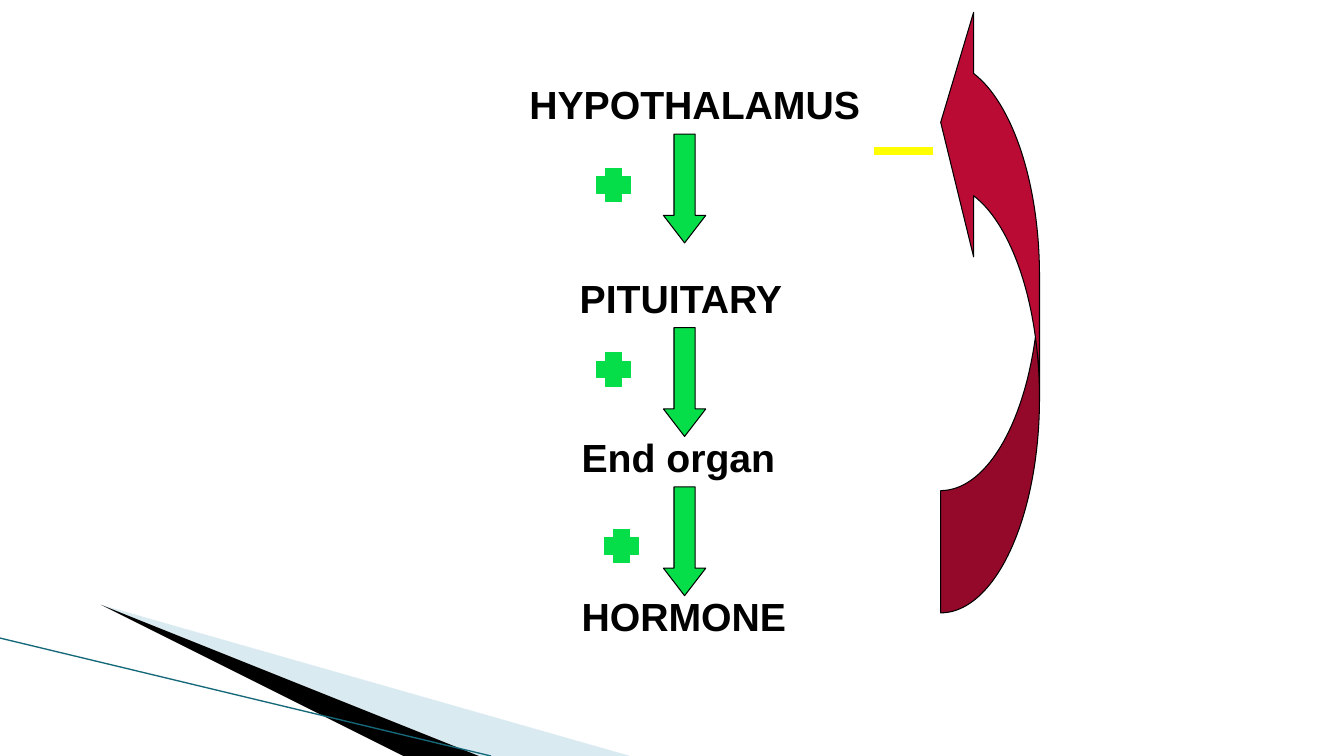
from pptx import Presentation as Deck
from pptx.dml.color import RGBColor as Rgb
from pptx.enum.shapes import MSO_CONNECTOR as Link, MSO_SHAPE as Kind
from pptx.enum.text import MSO_AUTO_SIZE as Fit
from pptx.oxml.ns import qn
from pptx.util import Inches, Pt
from lxml.etree import SubElement as Sub

HUES = {"ink": "000000", "green": "06DE49", "red": "B90B34",
        "gold": "FFFF00", "pale": "A0CBDC", "teal": "16697A"}


def write(box, text, font="Arial", size=28, bold=True, hue="ink"):
    para = box.text_frame.paragraphs[0]
    run = para.add_run()
    run.text = text
    run.font.name = font
    run.font.size = Pt(size)
    run.font.bold = bold
    run.font.color.rgb = Rgb.from_string(HUES[hue])


class Chart:
    """Draws the pieces of the hormone feedback slide."""

    def __init__(self, slide):
        self.slide = slide
        self.edge = 0.75

    def paint(self, shape, fill, line=None):
        shape.shadow.inherit = False
        shape.fill.solid()
        shape.fill.fore_color.rgb = Rgb.from_string(HUES[fill])
        if line:
            shape.line.color.rgb = Rgb.from_string(HUES[line])
            shape.line.width = Pt(self.edge)
        else:
            shape.line.fill.background()

    def wedge(self, dots, fill, alpha=None):
        pen = self.slide.shapes.build_freeform(*dots[0], scale=Inches(1))
        pen.add_line_segments(dots[1:], close=True)
        shape = pen.convert_to_shape()
        self.paint(shape, fill)
        if alpha:
            tint = shape._element.spPr.find(qn("a:solidFill"))[0]
            Sub(tint, qn("a:alpha"), val=str(alpha * 1000))

    def line(self, start, end, hue, width):
        ends = [Inches(n) for n in (*start, *end)]
        link = self.slide.shapes.add_connector(Link.STRAIGHT, *ends)
        link.line.color.rgb = Rgb.from_string(HUES[hue])
        link.line.width = Pt(width)
        Sub(link._element.spPr, qn("a:effectLst"))

    def label(self, text, left, top, width, inset):
        place = [Inches(n) for n in (left, top, width, 0.57)]
        box = self.slide.shapes.add_textbox(*place)
        frame = box.text_frame
        frame.word_wrap = True
        frame.auto_size = Fit.SHAPE_TO_FIT_TEXT
        frame.margin_left = Inches(inset)
        write(box, text)

    def shape(self, kind, place, adjust, fill, line, turn=0):
        spot = [Inches(n) for n in place]
        shape = self.slide.shapes.add_shape(kind, *spot)
        for i, value in enumerate(adjust):
            shape.adjustments[i] = value
        shape.rotation = turn
        self.paint(shape, fill, line)


def main():
    deck = Deck()
    deck.slide_width, deck.slide_height = Inches(13.33), Inches(7.5)
    chart = Chart(deck.slides.add_slide(deck.slide_layouts[6]))

    chart.wedge([(0.73, 6.5), (7.88, 7.5), (6.08, 7.5)], "pale", alpha=40)
    chart.wedge([(0.71, 6.49), (6.05, 7.5), (4.9, 7.5)], "ink")
    chart.line((0, 6.33), (4.87, 7.5), "teal", 0.95)

    for text, left, top, width, inset in (
            ("HYPOTHALAMUS", 5.08, 0.75, 3.75, 0.17),
            ("PITUITARY", 5.58, 2.67, 2.58, 0.17),
            ("End organ", 5.67, 4.25, 2.42, 0.1),
            ("HORMONE", 5.67, 5.83, 2.42, 0.1)):
        chart.label(text, left, top, width, inset)

    for top in (1.33, 3.25, 4.83):
        chart.shape(Kind.DOWN_ARROW, (6.58, top, 0.42, 1.08),
                    (0.5, 0.65), "green", "ink")

    chart.shape(Kind.CURVED_RIGHT_ARROW, (9.33, 0, 0.98, 6.08),
                (1.238, 2.476, 0.333), "red", "ink", turn=180)
    chart.line((8.67, 1.5), (9.25, 1.5), "gold", 6)

    for left, top in ((5.92, 1.67), (5.92, 3.5), (6, 5.25)):
        chart.shape(Kind.CROSS, (left, top, 0.33, 0.33),
                    (0.25,), "green", "green")

    deck.save("out.pptx")


if __name__ == "__main__":
    main()
